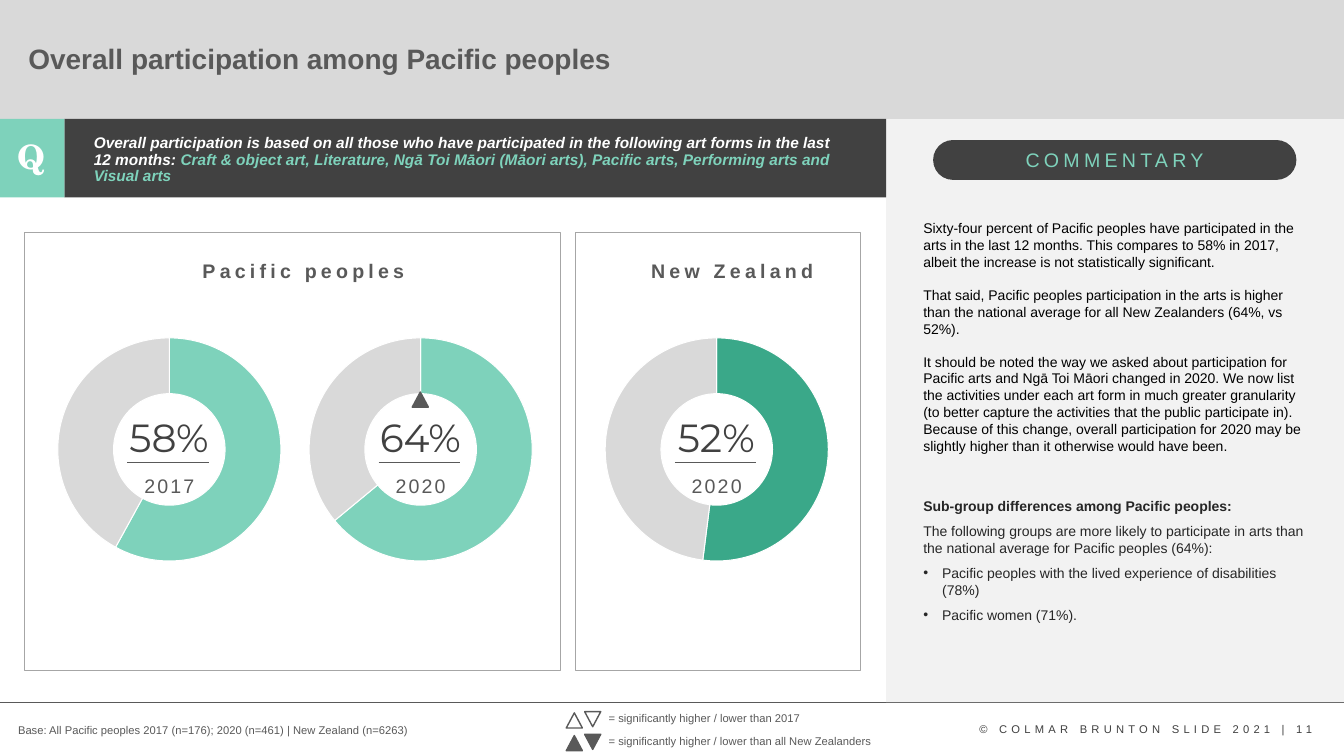
import pptx
import pptx.util
import pptx.oxml
import pptx.oxml.ns
import pptx.chart.data
import pptx.dml.color
import pptx.enum.chart
import pptx.enum.shapes
import pptx.enum.text

Pt = pptx.util.Pt
Shape = pptx.enum.shapes.MSO_SHAPE
Align = pptx.enum.text.PP_ALIGN
Anchor = pptx.enum.text.MSO_ANCHOR
Fit = pptx.enum.text.MSO_AUTO_SIZE

MINT, GREEN, CHARCOAL = "7ED2BB", "3AA889", "414141"
GREY, LIGHT, WHITE, INK = "595959", "D9D9D9", "FFFFFF", "262626"


def colour(value):
    return pptx.dml.color.RGBColor.from_string(value)


def add_block(shapes, left, top, width, height, kind=Shape.RECTANGLE, fill=None, line=None, weight=0.5):
    block = shapes.add_shape(kind, Pt(left), Pt(top), Pt(width), Pt(height))
    block.shadow.inherit = False
    if fill:
        block.fill.solid()
        block.fill.fore_color.rgb = colour(fill)
    else:
        block.fill.background()
    if line:
        block.line.color.rgb = colour(line)
        block.line.width = Pt(weight)
    else:
        block.line.fill.background()
    return block


def add_rule(shapes, start, end, top):
    rule = shapes.add_connector(
        pptx.enum.shapes.MSO_CONNECTOR.STRAIGHT, Pt(start), Pt(top), Pt(end), Pt(top))
    rule.line.color.rgb = colour(GREY)
    rule.line.width = Pt(0.5)
    properties = rule.element.spPr
    properties.append(properties.makeelement(pptx.oxml.ns.qn("a:effectLst"), {}))


def write(para, text, size=10, color=GREY, font="Arial", bold=False, italic=False, spacing=0):
    span = para.add_run()
    span.text = text
    span.font.size = Pt(size)
    span.font.name = font
    span.font.bold = bold
    span.font.italic = italic
    span.font.color.rgb = colour(color)
    if spacing:
        span._r.get_or_add_rPr().set("spc", str(int(spacing * 100)))


def add_label(shapes, left, top, width, height, text, align=Align.LEFT, wrap=False, **format):
    box = shapes.add_textbox(Pt(left), Pt(top), Pt(width), Pt(height))
    box.text_frame.word_wrap = wrap
    box.text_frame.auto_size = Fit.SHAPE_TO_FIT_TEXT
    para = box.text_frame.paragraphs[0]
    para.alignment = align
    write(para, text, **format)


def place(holder, left, top, width, height, anchor=Anchor.TOP):
    holder.left, holder.top, holder.width, holder.height = Pt(left), Pt(top), Pt(width), Pt(height)
    holder.element.getparent().append(holder.element)
    frame = holder.text_frame
    frame.word_wrap = True
    frame.auto_size = Fit.NONE
    frame.vertical_anchor = anchor
    return frame


def format_para(para, before=0, line_spacing=1.0, bullet=None):
    properties = para._p.get_or_add_pPr()
    indent = Pt(13.5) if bullet else 0
    properties.set("marL", str(indent))
    properties.set("indent", str(-indent))
    tag = "a:buChar" if bullet else "a:buNone"
    mark = properties.makeelement(pptx.oxml.ns.qn(tag), {"char": bullet} if bullet else {})
    properties.append(mark)
    para.alignment = Align.LEFT
    para.space_before = Pt(before)
    para.line_spacing = line_spacing


def add_ring(shapes, centre, share, year, ring_colour):
    data = pptx.chart.data.CategoryChartData()
    data.categories = ["1", "2"]
    data.add_series("Series 1", (share, 100 - share))
    chart = shapes.add_chart(
        pptx.enum.chart.XL_CHART_TYPE.DOUGHNUT,
        Pt(centre - 134.5), Pt(216.8), Pt(265.7), Pt(202.5), data).chart
    chart.has_legend = False
    chart.has_title = False
    chart.font.size = Pt(12)
    chart.font.name = "Arial"
    chart.font.color.rgb = colour(WHITE)
    plot = chart.plots[0]
    plot.vary_by_categories = True
    for index, fill in enumerate((ring_colour, LIGHT)):
        look = plot.series[0].points[index].format
        look.fill.solid()
        look.fill.fore_color.rgb = colour(fill)
        look.line.color.rgb = colour(WHITE)
        look.line.width = Pt(0.75)
    area = chart.element.xpath("//c:plotArea")[0]
    area.xpath(".//c:holeSize")[0].set("val", "74")
    for layout in area.xpath("./c:layout"):
        area.remove(layout)
    settings = [("layoutTarget", "inner"), ("xMode", "edge"), ("yMode", "edge"),
                ("x", 0.21), ("y", 0.12), ("w", 0.6), ("h", 0.79)]
    entries = "".join(f'<c:{name} val="{value}"/>' for name, value in settings)
    area.insert(0, pptx.oxml.parse_xml(
        f'<c:layout {pptx.oxml.ns.nsdecls("c")}><c:manualLayout>{entries}</c:manualLayout></c:layout>'))
    add_label(shapes, centre - 39.5, 291.5, 80.5, 41, f"{share}%", align=Align.CENTER,
              size=28, font="Montserrat", color=CHARCOAL)
    add_label(shapes, centre - 25, 335, 52, 24.5, year, align=Align.CENTER, size=14, spacing=1.5)
    add_rule(shapes, centre - 29, centre + 29, 330)


def add_panel(shapes, left, width, heading, heading_left, heading_width):
    add_block(shapes, left, 166, width, 313, line="A6A6A6")
    add_label(shapes, heading_left, 181.5, heading_width, 24.5, heading, align=Align.CENTER,
              size=14, bold=True, spacing=3)


def add_triangle(shapes, left, top, fill):
    return add_block(shapes, left, top, 11.5, 10.8, Shape.ISOSCELES_TRIANGLE, fill, GREY, 1)


def add_key(shapes, top, width, fill, text):
    key = shapes.add_group_shape().shapes
    add_label(key, 427.7, top, width, 17.5, text, size=8)
    add_triangle(key, 404.5, top + 4.5, fill)
    add_triangle(key, 417.6, top + 3.6, fill).rotation = 180


def add_background(shapes):
    add_block(shapes, 0, -1.5, 960, 86.5, fill=LIGHT)
    add_label(shapes, 692.5, 512.5, 260, 17.5, "© COLMAR BRUNTON SLIDE 2021 | 11",
              wrap=True, size=8, color="404040", spacing=3)
    add_rule(shapes, 0, 960, 501.8)
    add_block(shapes, 633, 85, 327, 416.5, fill="F2F2F2")
    add_block(shapes, 46, 85, 587, 56, fill=CHARCOAL)
    add_block(shapes, 0, 85, 46, 56, fill=MINT)
    add_label(shapes, 5.5, 93.5, 34, 36, "Q", align=Align.CENTER, wrap=True,
              size=24, font="TeX Gyre Schola", color=WHITE, bold=True)
    add_block(shapes, 666.5, 100, 259.5, 28.5, Shape.ROUNDED_RECTANGLE, CHARCOAL).adjustments[0] = 0.5
    add_label(shapes, 725.5, 102.2, 145.5, 24.5, "COMMENTARY", size=14, color=MINT, spacing=3)


def fill_title(holder):
    para = place(holder, 13, 15, 806, 56, Anchor.MIDDLE).paragraphs[0]
    format_para(para, line_spacing=0.9)
    write(para, "Overall participation among Pacific peoples", size=20, bold=True)


def fill_question(holder):
    para = place(holder, 59.8, 93, 543.5, 33).paragraphs[0]
    format_para(para, line_spacing=0.9)
    write(para, "Overall participation is based on all those who have participated in the following art forms in the last 12 months: ",
          size=11, color=WHITE, bold=True, italic=True)
    write(para, "Craft & object art, Literature, Ngā Toi Māori (Māori arts), Pacific arts, Performing arts and Visual arts",
          size=11, color=MINT, bold=True, italic=True)


def fill_commentary(holder):
    frame = place(holder, 652.3, 153.4, 290, 298)
    rows = [
        ("Sixty-four percent of Pacific peoples have participated in the arts in the last 12 months. This compares to 58% in 2017, albeit the increase is not statistically significant.", 0, "000000", False, None),
        ("That said, Pacific peoples participation in the arts is higher than the national average for all New Zealanders (64%, vs 52%).", 11.5, "000000", False, None),
        ("It should be noted the way we asked about participation for Pacific arts and Ngā Toi Māori changed in 2020. We now list the activities under each art form in much greater granularity (to better capture the activities that the public participate in). Because of this change, overall participation for 2020 may be slightly higher than it otherwise would have been.", 11.5, "000000", False, None),
        ("Sub-group differences among Pacific peoples:", 31, INK, True, None),
        ("The following groups are more likely to participate in arts than the national average for Pacific peoples (64%):", 6, INK, False, None),
        ("Pacific peoples with the lived experience of disabilities (78%)", 6, INK, False, "•"),
        ("Pacific women (71%).", 6, INK, False, "•"),
    ]
    for index, (text, before, color, bold, bullet) in enumerate(rows):
        para = frame.add_paragraph() if index else frame.paragraphs[0]
        format_para(para, before=before, bullet=bullet)
        write(para, text, color=color, bold=bold)


def main():
    deck = pptx.Presentation()
    deck.slide_width, deck.slide_height = Pt(960), Pt(540)
    page = deck.slides.add_slide(deck.slide_layouts.get_by_name("Two Content"))
    title, question, commentary = page.placeholders
    shapes = page.shapes
    add_background(shapes)
    fill_title(title)
    fill_question(question)
    add_panel(shapes, 17.5, 383, "Pacific peoples", 135.5, 162.5)
    add_panel(shapes, 411, 203.5, "New Zealand", 456, 134)
    for ring in ((120, 58, "2017", MINT), (299.5, 64, "2020", MINT), (511, 52, "2020", GREEN)):
        add_ring(shapes, *ring)
    add_triangle(shapes, 294.5, 280, GREY)
    add_label(shapes, 5.8, 513.4, 371, 17.5,
              "Base: All Pacific peoples 2017 (n=176); 2020 (n=461) | New Zealand (n=6263)", wrap=True, size=8)
    add_key(shapes, 504.7, 153.5, WHITE, "= significantly higher / lower than 2017")
    add_key(shapes, 520.9, 204.5, GREY, "= significantly higher / lower than all New Zealanders")
    fill_commentary(commentary)
    deck.save("out.pptx")


if __name__ == "__main__":
    main()
